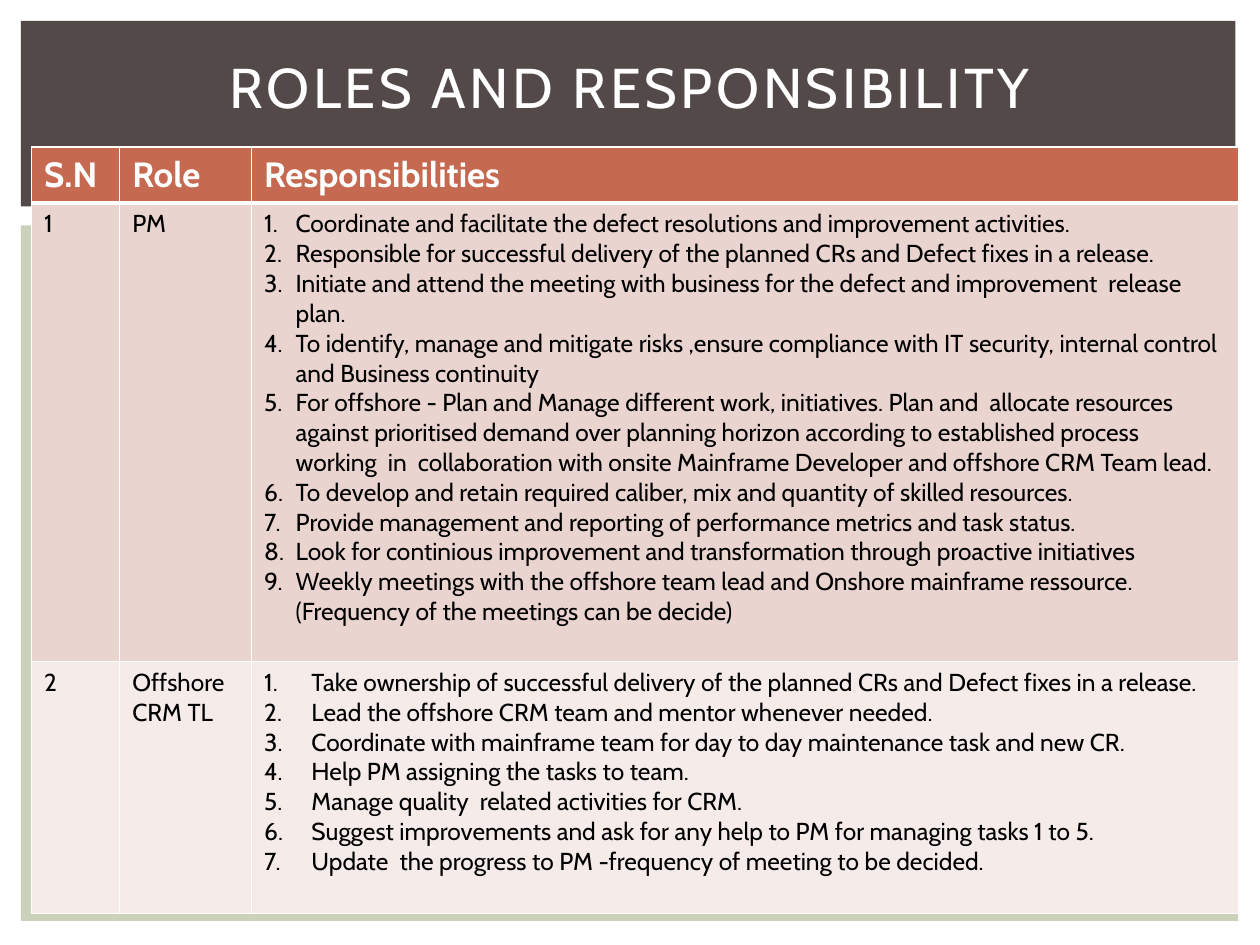
from lxml import etree
from pptx import Presentation
from pptx.dml.color import RGBColor
from pptx.enum.shapes import MSO_SHAPE
from pptx.enum.text import MSO_ANCHOR, PP_ALIGN
from pptx.oxml.ns import qn
from pptx.util import Pt

RECTANGLE = MSO_SHAPE.RECTANGLE
MIDDLE = MSO_ANCHOR.MIDDLE
CENTER = PP_ALIGN.CENTER

WHITE = RGBColor(0xFF, 0xFF, 0xFF)
BLACK = RGBColor(0x00, 0x00, 0x00)
BROWN = RGBColor(0x53, 0x49, 0x49)
SAGE = RGBColor(0xCC, 0xD1, 0xB9)
RUST = RGBColor(0xC6, 0x69, 0x51)
ROW_FILLS = [RGBColor(0xEA, 0xD4, 0xD0), RGBColor(0xF5, 0xEB, 0xE9)]
FONT = "Cabin"

COLUMN_WIDTHS = [50.4, 75.4, 564.2]
ROW_HEIGHTS = [32, 262, 144]
HEADINGS = ["S.N", "Role", "Responsibilities"]
# Number, role, list indent, responsibilities
ROLES = [
    ("1", "PM", 18, [
        "Coordinate and facilitate the defect resolutions and improvement activities.",
        "Responsible for successful delivery of the planned CRs and Defect fixes in a release.",
        "Initiate and attend the meeting with business for the defect and improvement  release plan.",
        "To identify, manage and mitigate risks ,ensure compliance with IT security, "
        "internal control and Business continuity",
        "For offshore - Plan and Manage different work, initiatives. Plan and  allocate resources "
        "against prioritised demand over planning horizon according to established process working "
        " in  collaboration with onsite Mainframe Developer and offshore CRM Team lead.",
        "To develop and retain required caliber, mix and quantity of skilled resources.",
        "Provide management and reporting of performance metrics and task status.",
        "Look for continious improvement and transformation through proactive initiatives",
        "Weekly meetings with the offshore team lead and Onshore mainframe ressource. "
        "(Frequency of the meetings can be decide)",
    ]),
    ("2", "Offshore CRM TL", 27, [
        "Take ownership of successful delivery of the planned CRs and Defect fixes in a release.",
        "Lead the offshore CRM team and mentor whenever needed.",
        "Coordinate with mainframe team for day to day maintenance task and new CR.",
        "Help PM assigning the tasks to team.",
        "Manage quality  related activities for CRM.",
        "Suggest improvements and ask for any help to PM for managing tasks 1 to 5.",
        "Update  the progress to PM -frequency of meeting to be decided.",
    ]),
]


def style_font(font, size, color, bold=False):
    font.name = FONT
    font.size = Pt(size)
    font.bold = bold
    font.color.rgb = color


def add_panel(slide, left, top, width, height, color):
    panel = slide.shapes.add_shape(RECTANGLE, Pt(left), Pt(top), Pt(width), Pt(height))
    panel.shadow.inherit = False
    panel.fill.solid()
    panel.fill.fore_color.rgb = color
    panel.line.fill.background()


def place_title(slide, left, top, width, height):
    title = slide.shapes.title
    title.left, title.top, title.width, title.height = Pt(left), Pt(top), Pt(width), Pt(height)
    frame = title.text_frame
    frame.text = "ROLES AND RESPONSIBILITY"
    frame.word_wrap = True
    frame.vertical_anchor = MIDDLE
    paragraph = frame.paragraphs[0]
    paragraph.alignment = CENTER
    style_font(paragraph.font, 32, WHITE)
    paragraph.runs[0].font._element.set("spc", "200")
    # Bring the title in front of the panels
    slide.shapes.element.append(title.element)


def set_borders(cell, widths):
    properties = cell._tc.get_or_add_tcPr()
    for side, width in zip("LRTB", widths):
        line = etree.SubElement(properties, qn(f"a:ln{side}"), w=str(Pt(width)))
        fill = etree.SubElement(line, qn("a:solidFill"))
        etree.SubElement(fill, qn("a:srgbClr"), val=str(WHITE))


def fill_cell(cell, lines, size, color, background, bold=False):
    cell.fill.solid()
    cell.fill.fore_color.rgb = background
    cell.text = "\n".join(lines)
    for paragraph in cell.text_frame.paragraphs:
        style_font(paragraph.font, size, color, bold)


def number_paragraphs(cell, indent):
    for paragraph in cell.text_frame.paragraphs:
        properties = paragraph._p.get_or_add_pPr()
        properties.set("marL", str(Pt(indent)))
        properties.set("indent", str(-Pt(indent)))
        numbering = etree.Element(qn("a:buAutoNum"), type="arabicPeriod")
        properties.insert(0, numbering)


def add_roles_table(slide, left, top):
    frame = slide.shapes.add_table(
        len(ROW_HEIGHTS), len(COLUMN_WIDTHS), Pt(left), Pt(top),
        Pt(sum(COLUMN_WIDTHS)), Pt(sum(ROW_HEIGHTS)))
    table = frame.table
    table.horz_banding = False
    for column, width in zip(table.columns, COLUMN_WIDTHS):
        column.width = Pt(width)
    for row, height in zip(table.rows, ROW_HEIGHTS):
        row.height = Pt(height)

    # Borders, with a heavier rule below the header
    for index, row in enumerate(table.rows):
        for cell in row.cells:
            set_borders(cell, [1, 1, 3 if index == 1 else 1, 3 if index == 0 else 1])

    # Header row
    for column, heading in enumerate(HEADINGS):
        fill_cell(table.cell(0, column), [heading], 20, WHITE, RUST, bold=True)

    # One row for each role
    for index, (number, role, indent, duties) in enumerate(ROLES):
        for column, lines in enumerate([[number], [role], duties]):
            fill_cell(table.cell(index + 1, column), lines, 14, BLACK, ROW_FILLS[index])
        number_paragraphs(table.cell(index + 1, 2), indent)


def main():
    presentation = Presentation()
    presentation.slide_width = Pt(720)
    presentation.slide_height = Pt(540)
    slide = presentation.slides.add_slide(presentation.slide_layouts[5])

    # Background panels
    add_panel(slide, 12, 128.8, 695.5, 397.5, SAGE)
    add_panel(slide, 12, 12, 694, 106, BROWN)

    # Content
    add_roles_table(slide, 18, 84)
    place_title(slide, 30, 24, 660, 50)
    presentation.save("out.pptx")


if __name__ == "__main__":
    main()
